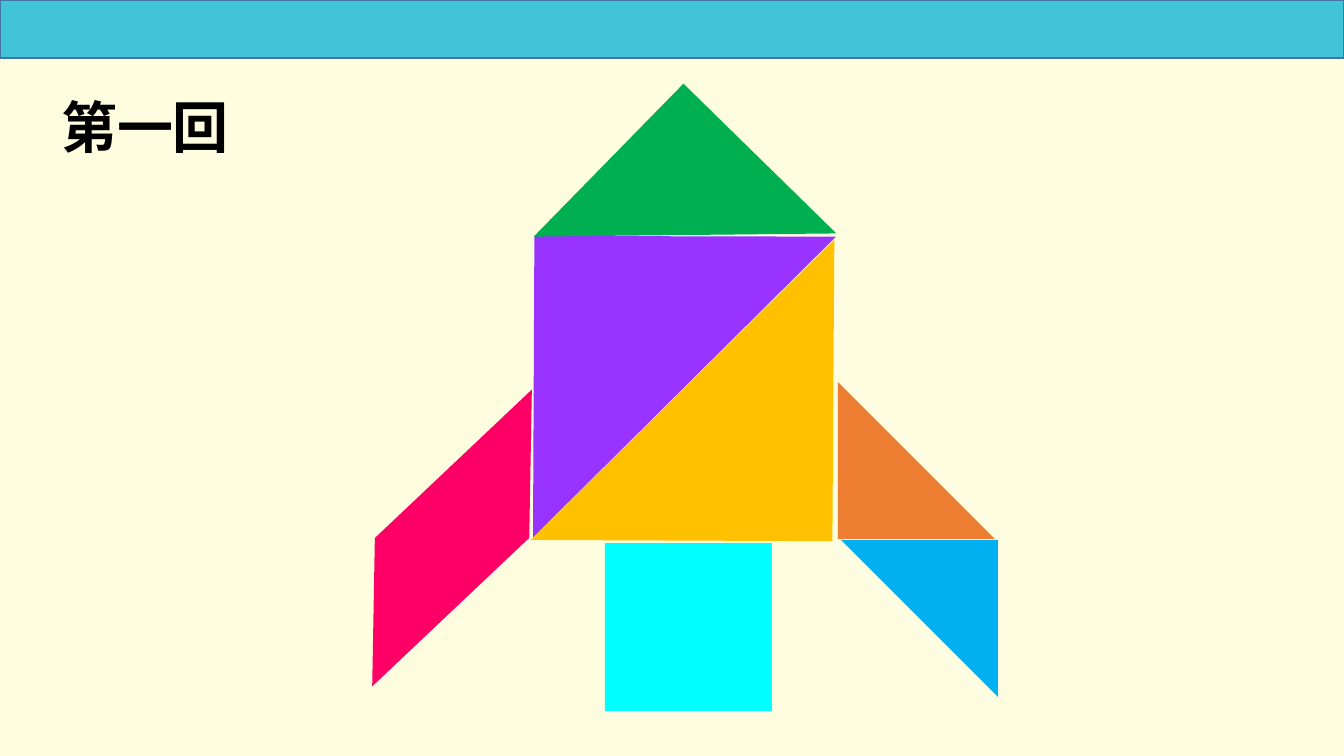
from dataclasses import dataclass

from lxml import etree
from pptx import Presentation
from pptx.dml.color import RGBColor
from pptx.enum.shapes import MSO_SHAPE
from pptx.enum.text import MSO_ANCHOR, MSO_AUTO_SIZE, PP_ALIGN
from pptx.oxml.ns import qn
from pptx.util import Emu, Pt

RECTANGLE = MSO_SHAPE.RECTANGLE
TRIANGLE = MSO_SHAPE.ISOSCELES_TRIANGLE
RIGHT_TRIANGLE = MSO_SHAPE.RIGHT_TRIANGLE
PARALLELOGRAM = MSO_SHAPE.PARALLELOGRAM


@dataclass(frozen=True)
class Theme:
    paper: str = "FFFDE0"
    band: str = "41C3D8"
    band_edge: str = "43739E"
    ink: str = "000000"
    font: str = "Noto Sans CJK SC"
    title_size: int = 40
    purple: str = "9933FF"
    yellow: str = "FFC000"
    green: str = "00B050"
    pink: str = "FF0066"
    orange: str = "ED7D31"
    blue: str = "00B0F0"
    cyan: str = "00FFFF"


THEME = Theme()

# Content, lengths in px
SLIDE = (1344, 756)
TITLE = ("第一回", (50, 87, 190, 78))
BAND = (0, 0, 1344, 58)

# Tangram pieces: preset, box before rotation, colour, rotation, flipped, adjustment
ROCKET = [
    (TRIANGLE, (396, 205, 427, 213), THEME.purple, 315.2, False, 0.5),
    (TRIANGLE, (544, 359, 427, 213), THEME.yellow, 135.3, False, 0.5),
    (RIGHT_TRIANGLE, (578, 128, 214, 214), THEME.green, 224.4, True, None),
    (PARALLELOGRAM, (292, 485, 320, 106), THEME.pink, 136.6, False, 0.98),
    (RIGHT_TRIANGLE, (838, 382, 157, 157), THEME.orange, 0, False, None),
    (RIGHT_TRIANGLE, (841, 540, 157, 157), THEME.blue, 270, True, None),
    (RECTANGLE, (605, 543, 167, 168), THEME.cyan, 0, False, None),
]


def px(length):
    return Emu(round(length * 914400 / 100.8))


def add_piece(slide, preset, box, colour, rotation=0, flipped=False, adjustment=None):
    piece = slide.shapes.add_shape(preset, *map(px, box))
    piece.shadow.inherit = False
    piece.fill.solid()
    piece.fill.fore_color.rgb = RGBColor.from_string(colour)
    piece.line.fill.background()
    piece.rotation = rotation
    if flipped:
        piece.element.spPr.find(qn("a:xfrm")).set("flipH", "1")
    if adjustment is not None:
        piece.adjustments[0] = adjustment
    return piece


def write_title(title, wording, box):
    title.left, title.top, title.width, title.height = map(px, box)
    frame = title.text_frame
    frame.text = wording
    frame.word_wrap = False
    frame.auto_size = MSO_AUTO_SIZE.SHAPE_TO_FIT_TEXT
    frame.vertical_anchor = MSO_ANCHOR.TOP
    heading = frame.paragraphs[0]
    heading.alignment = PP_ALIGN.CENTER
    font = heading.runs[0].font
    font.name = THEME.font
    font.size = Pt(THEME.title_size)
    font.bold = True
    font.color.rgb = RGBColor.from_string(THEME.ink)
    # East Asian typeface follows the Latin one
    latin = heading.runs[0].font._element.find(qn("a:latin"))
    east_asian = etree.Element(qn("a:ea"), typeface=THEME.font)
    latin.addnext(east_asian)


def main():
    deck = Presentation()
    deck.slide_width, deck.slide_height = map(px, SLIDE)
    slide = deck.slides.add_slide(deck.slide_layouts[5])

    # Backdrop and top band
    slide.background.fill.solid()
    slide.background.fill.fore_color.rgb = RGBColor.from_string(THEME.paper)
    band = add_piece(slide, RECTANGLE, BAND, THEME.band)
    band.line.color.rgb = RGBColor.from_string(THEME.band_edge)
    band.line.width = Pt(1)

    # Rocket and title
    for piece in ROCKET:
        add_piece(slide, *piece)
    write_title(slide.shapes.title, *TITLE)

    deck.save("out.pptx")


if __name__ == "__main__":
    main()
